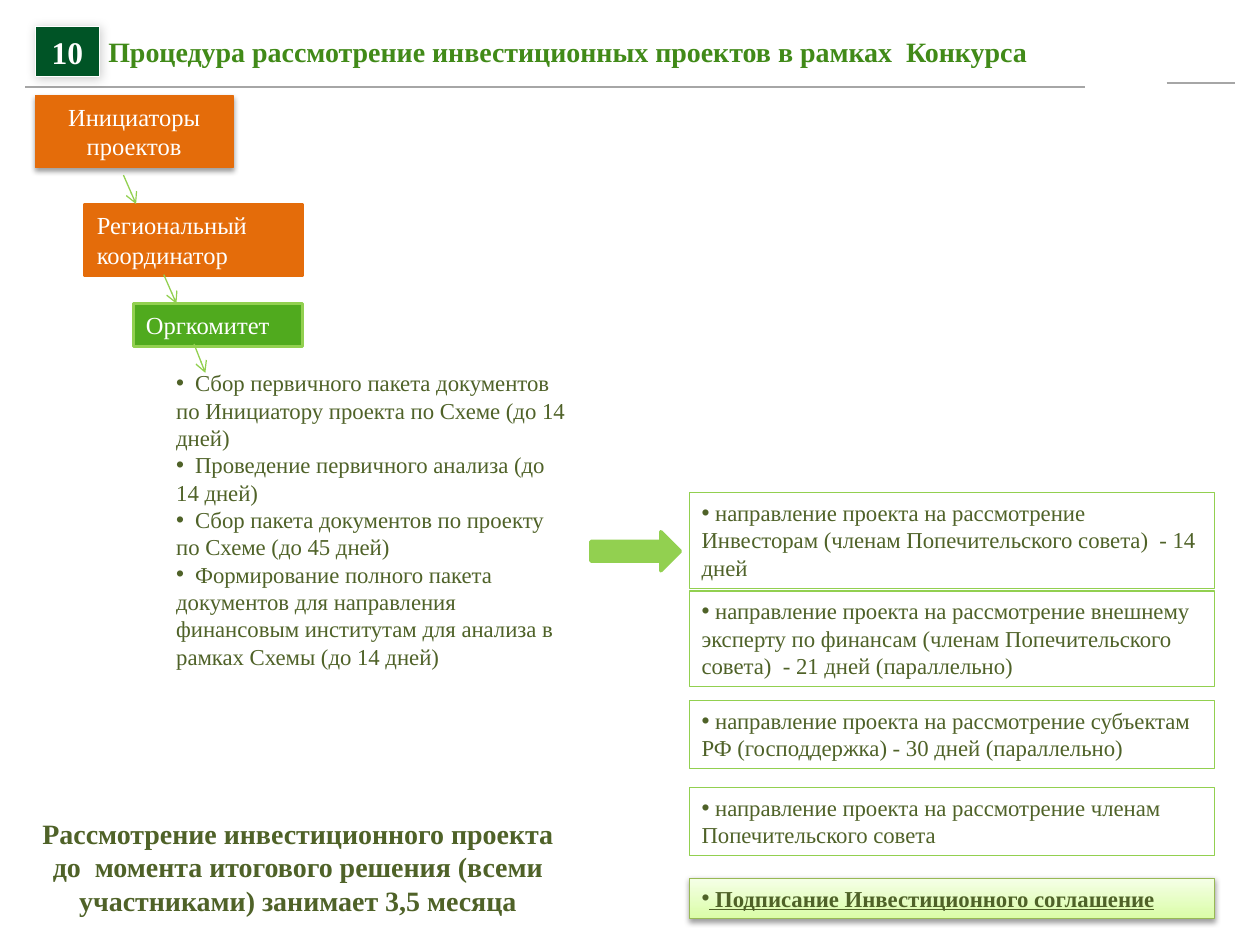
from lxml.etree import SubElement as Sub
from pptx import Presentation
from pptx.dml.color import RGBColor
from pptx.enum.shapes import MSO_CONNECTOR as Conn, MSO_SHAPE as Kind
from pptx.enum.text import MSO_ANCHOR as Anchor, PP_ALIGN as Align
from pptx.oxml.ns import qn
from pptx.util import Inches, Pt

WHITE = RGBColor(0xFF, 0xFF, 0xFF)
GRAY = RGBColor(0xA6, 0xA6, 0xA6)
ORANGE = RGBColor(0xE4, 0x6C, 0x0A)
LIME = RGBColor(0x92, 0xD0, 0x50)
GREEN = RGBColor(0x50, 0xAA, 0x1E)
DARK = RGBColor(0x00, 0x54, 0x26)
OLIVE = RGBColor(0x4F, 0x62, 0x28)
TITLE = RGBColor(0x41, 0x8A, 0x18)
EDGE = RGBColor(0x98, 0xB9, 0x55)
PALE = RGBColor(0xF5, 0xFF, 0xE7)
MINT = RGBColor(0xDA, 0xFD, 0xA7)

deck = Presentation()
deck.slide_width, deck.slide_height = Inches(10), Inches(7.5)
slide = deck.slides.add_slide(deck.slide_layouts[6])
shapes = slide.shapes


def write(shape, lines, size, color, bold=False, align=Align.LEFT,
          bullet=False, tab=None):
    """Fill the shape with one paragraph per line; tab is the gap after a bullet."""
    frame = shape.text_frame
    frame.word_wrap = True
    frame.vertical_anchor = Anchor.TOP
    frame.text = "\n".join(lines)
    for para in frame.paragraphs:
        para.alignment = align
        if bullet:
            props = para._p.get_or_add_pPr()
            props.set("marL", "0")
            props.set("indent", "0")
            Sub(props, qn("a:buFont"), typeface="Arial")
            Sub(props, qn("a:buChar"), char="•")
            if tab:
                stops = Sub(props, qn("a:tabLst"))
                Sub(stops, qn("a:tab"), pos=str(tab), algn="l")
        font = para.font
        font.name, font.size, font.bold = "Times New Roman", Pt(size), bold
        font.color.rgb = color


def add_box(place, fill, edge, width, kind=Kind.RECTANGLE, shade=None):
    """Add a shape; shade is the shadow's opacity, blur, distance and angle."""
    box = shapes.add_shape(kind, *map(Inches, place))
    box.shadow.inherit = False
    if fill is None:
        box.fill.background()
    else:
        box.fill.solid()
        box.fill.fore_color.rgb = fill
    box.line.color.rgb = edge
    box.line.width = Pt(width)
    if shade:
        alpha, blur, dist, angle = shade
        effects = box._element.spPr.find(qn("a:effectLst"))
        outer = Sub(effects, qn("a:outerShdw"), blurRad=str(Pt(blur)),
                    dist=str(Pt(dist)), dir=str(angle * 60000), rotWithShape="0")
        black = Sub(outer, qn("a:srgbClr"), val="000000")
        Sub(black, qn("a:alpha"), val=str(alpha * 1000))
    return box


SOFT = (38, 3.1, 1.6, 90)

# Steps on the left
start = add_box((0.28, 0.76, 1.57, 0.57), ORANGE, ORANGE, 0.75, shade=SOFT)
write(start, ["Инициаторы", "проектов"], 14, WHITE, align=Align.CENTER)
region = add_box((0.67, 1.62, 1.73, 0.57), ORANGE, ORANGE, 1.5)
write(region, ["Региональный", "координатор"], 14, WHITE)
board = add_box((1.06, 2.41, 1.34, 0.34), GREEN, LIME, 1.5)
write(board, ["Оргкомитет"], 14, WHITE)

tasks = shapes.add_textbox(Inches(1.3), Inches(2.88), Inches(3.31), Inches(2.51))
write(tasks, [
    "\tСбор первичного пакета документов по Инициатору проекта по Схеме (до 14 дней)",
    "\tПроведение первичного анализа (до 14 дней)",
    "\tСбор пакета документов по проекту по Схеме (до 45 дней)",
    "\tФормирование полного пакета документов для направления финансовым "
    "институтам для анализа в рамках Схемы (до 14 дней)",
], 13, OLIVE, bullet=True, tab=Inches(0.15))

# Header rules and step arrows
for x1, y1, x2, y2, color, width, arrow in [
    (0.2, 0.69, 8.61, 0.69, GRAY, 1, False),
    (9.26, 0.66, 9.8, 0.66, GRAY, 1, False),
    (0.98, 1.39, 1.08, 1.62, LIME, 0.75, True),
    (1.3, 2.18, 1.4, 2.41, LIME, 0.75, True),
    (1.54, 2.73, 1.63, 2.96, LIME, 0.75, True),
]:
    link = shapes.add_connector(Conn.STRAIGHT, *map(Inches, (x1, y1, x2, y2)))
    link.line.color.rgb = color
    link.line.width = Pt(width)
    if arrow:
        Sub(link.line._get_or_add_ln(), qn("a:tailEnd"), type="arrow")
    Sub(link._element.spPr, qn("a:effectLst"))

# Reviews on the right
add_box((4.69, 4.22, 0.71, 0.31), LIME, LIME, 2, Kind.RIGHT_ARROW)
for top, height, text in [
    (3.91, 0.76, "Инвесторам (членам Попечительского совета)  - 14 дней"),
    (4.69, 0.76, "внешнему эксперту по финансам (членам Попечительского совета)"
                 "  - 21 дней (параллельно)"),
    (5.56, 0.54, "субъектам РФ (господдержка) - 30 дней (параллельно)"),
    (6.25, 0.54, "членам Попечительского совета"),
]:
    review = add_box((5.47, top, 4.17, height), None, LIME, 0.75)
    write(review, [" направление проекта на рассмотрение " + text],
          13, OLIVE, bullet=True)

deal = add_box((5.47, 6.97, 4.17, 0.32), MINT, EDGE, 0.75, shade=SOFT)
deal.fill.gradient()
deal.fill.gradient_angle = 90
for stop, color in zip(deal.fill.gradient_stops, (MINT, PALE)):
    stop.color.rgb = color
write(deal, [" Подписание Инвестиционного соглашение"], 13, OLIVE, bold=True,
      align=Align.JUSTIFY, bullet=True)
deal.text_frame.paragraphs[0].font.underline = True

# Summary and header
total = shapes.add_textbox(Inches(0.2), Inches(6.43), Inches(4.33), Inches(0.91))
write(total, ["Рассмотрение инвестиционного проекта до  момента итогового решения "
              "(всеми участниками) занимает 3,5 месяца"],
      16, OLIVE, bold=True, align=Align.CENTER)

title = shapes.add_textbox(Inches(0.2), Inches(0.22), Inches(8.29), Inches(0.37))
write(title, ["Процедура рассмотрение инвестиционных проектов в рамках  Конкурса"],
      16, TITLE, bold=True)
title.text_frame.margin_left = Inches(0.66)
title.text_frame.vertical_anchor = Anchor.MIDDLE

number = add_box((0.28, 0.21, 0.51, 0.4), DARK, WHITE, 0.75, shade=(20, 6, 1, 45))
write(number, ["10"], 18, WHITE, bold=True, align=Align.CENTER)

deck.save("out.pptx")
